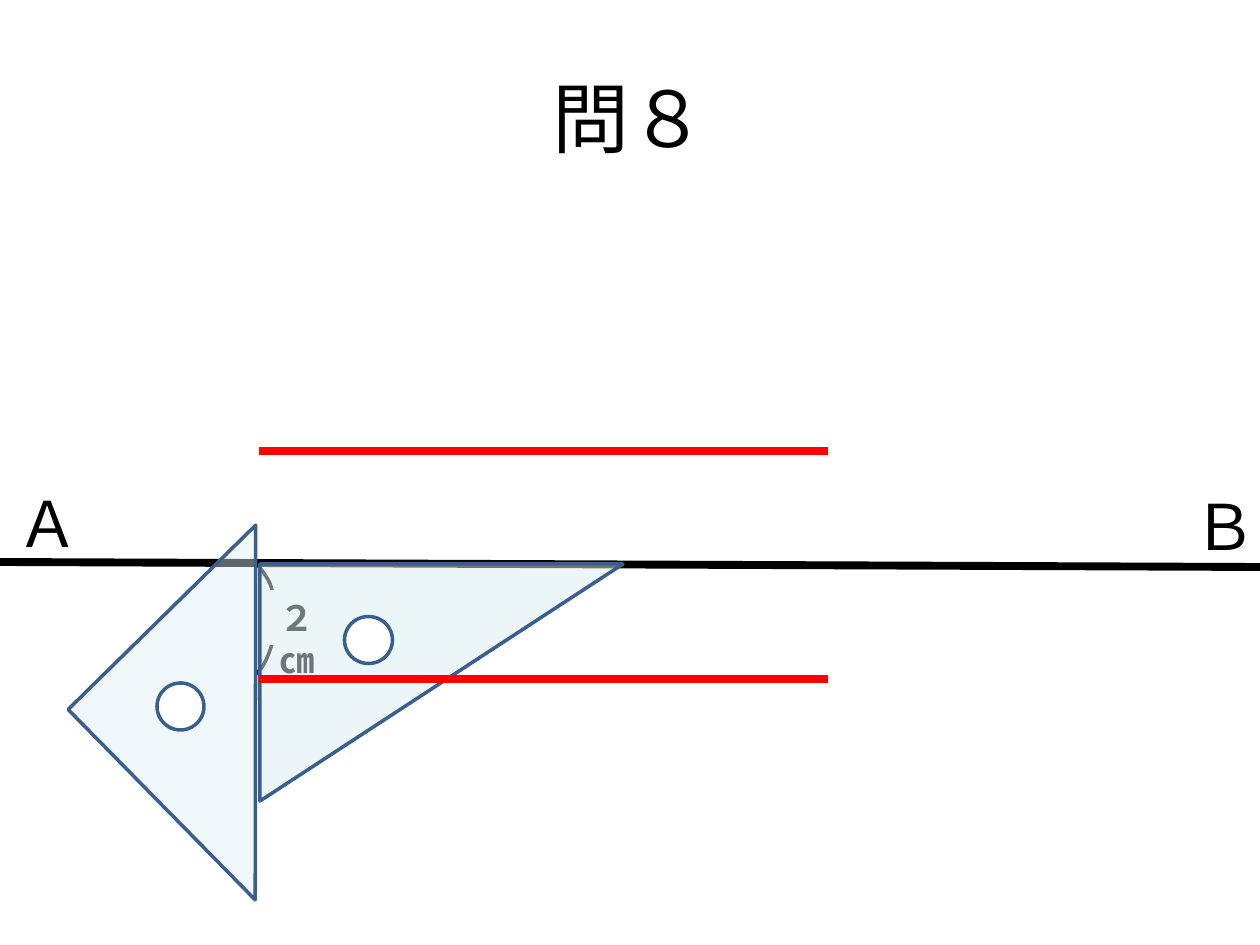
import dataclasses

import pptx
import pptx.dml.color
import pptx.enum.shapes
import pptx.enum.text
import pptx.oxml
import pptx.oxml.ns
import pptx.shapes.autoshape
import pptx.slide
import pptx.text.text
import pptx.util

EMU_PER_PX = 914400 / 126
COLOURS = {"ink": "000000", "paper": "FFFFFF", "glass": "DBEEF4", "edge": "3A5F8C", "answer": "FF0000"}
FONT = "Calibri"
CURVE_STEPS = 8
Point = tuple[int, int]


@dataclasses.dataclass
class Area:
    left: int
    top: int
    width: int
    height: int


@dataclasses.dataclass
class Label:
    text: str
    area: Area
    size: int
    bold: bool = False
    fill: str | None = None


@dataclasses.dataclass
class Rule:
    start: Point
    end: Point
    colour: str


@dataclasses.dataclass
class SetSquare:
    body: Area
    hole: Area
    rotation: float
    opacity: int


BRACE_START = (257, 564)
BRACE_CURVES = [
    ((263, 572), (270, 580), (272, 590)),
    ((276, 598), (277, 610), (276, 621)),
    ((276, 633), (271, 649), (267, 658)),
    ((263, 667), (260, 670), (256, 674)),
]
DISTANCE = Label("２㎝", Area(267, 590, 86, 55), 20, True, "paper")
TITLE = Label("問８", Area(63, 38, 1134, 157), 44)
END_LABELS = [
    Label("Ａ", Area(4, 478, 71, 89), 36),
    Label("Ｂ", Area(1181, 481, 74, 89), 36),
]
BASE_LINE = Rule((1260, 567), (0, 562), "ink")
PARALLELS = [Rule((828, y), (259, y), "answer") for y in (451, 679)]
SET_SQUARES = [
    SetSquare(Area(122, 581, 267, 263), Area(157, 683, 47, 47), 45.5, 43),
    SetSquare(Area(323, 501, 237, 363), Area(345, 616, 47, 48), 90, 50),
]


def px(value: float) -> pptx.util.Emu:
    return pptx.util.Emu(round(value * EMU_PER_PX))


def rgb(name: str) -> pptx.dml.color.RGBColor:
    return pptx.dml.color.RGBColor.from_string(COLOURS[name])


def bounds(area: Area) -> list[pptx.util.Emu]:
    return [px(value) for value in dataclasses.astuple(area)]


def write(frame: pptx.text.text.TextFrame, label: Label) -> None:
    frame.word_wrap = True
    para = frame.paragraphs[0]
    span = para.add_run()
    span.text = label.text
    span.font.name = FONT
    span.font.size = pptx.util.Pt(label.size)
    span.font.bold = label.bold
    span.font.color.rgb = rgb("ink")


def draw_label(page: pptx.slide.Slide, label: Label) -> None:
    box = page.shapes.add_textbox(*bounds(label.area))
    box.text_frame.vertical_anchor = pptx.enum.text.MSO_ANCHOR.TOP
    if label.fill:
        box.fill.solid()
        box.fill.fore_color.rgb = rgb(label.fill)
    write(box.text_frame, label)


def draw_title(page: pptx.slide.Slide, label: Label) -> None:
    title = page.shapes.title
    title.left, title.top, title.width, title.height = bounds(label.area)
    title.text_frame.vertical_anchor = pptx.enum.text.MSO_ANCHOR.MIDDLE
    write(title.text_frame, label)
    title.text_frame.paragraphs[0].alignment = pptx.enum.text.PP_ALIGN.CENTER


def draw_rule(page: pptx.slide.Slide, rule: Rule) -> None:
    ends = [px(value) for value in rule.start + rule.end]
    line = page.shapes.add_connector(pptx.enum.shapes.MSO_CONNECTOR.STRAIGHT, *ends)
    line.line.color.rgb = rgb(rule.colour)
    line.line.width = pptx.util.Pt(4.5)
    pptx.oxml.ns.qn("a:effectLst")
    line._element.spPr.append(pptx.oxml.parse_xml(f"<a:effectLst {pptx.oxml.ns.nsdecls('a')}/>"))


def outline(shape: pptx.shapes.autoshape.Shape, colour: str) -> None:
    shape.shadow.inherit = False
    shape.line.color.rgb = rgb(colour)
    shape.line.width = pptx.util.Pt(2)


def draw_set_square(page: pptx.slide.Slide, square: SetSquare) -> None:
    group = page.shapes.add_group_shape()
    kinds = pptx.enum.shapes.MSO_SHAPE
    parts = [
        (kinds.RIGHT_TRIANGLE, square.body, "glass", square.opacity),
        (kinds.OVAL, square.hole, "paper", 100),
    ]
    for kind, area, fill, opacity in parts:
        shape = group.shapes.add_shape(kind, *bounds(area))
        shape.rotation = square.rotation
        shape.fill.solid()
        shape.fill.fore_color.rgb = rgb(fill)
        outline(shape, "edge")
        if opacity < 100:
            colour = shape._element.spPr.find(".//" + pptx.oxml.ns.qn("a:srgbClr"))
            alpha = f'<a:alpha {pptx.oxml.ns.nsdecls("a")} val="{opacity * 1000}"/>'
            colour.append(pptx.oxml.parse_xml(alpha))


def curve_point(knots: tuple[Point, ...], t: float) -> tuple[pptx.util.Emu, pptx.util.Emu]:
    weights = ((1 - t) ** 3, 3 * t * (1 - t) ** 2, 3 * t**2 * (1 - t), t**3)
    x, y = (px(sum(w * k[axis] for w, k in zip(weights, knots))) for axis in (0, 1))
    return x, y


def draw_brace(page: pptx.slide.Slide) -> None:
    points = []
    start = BRACE_START
    for curve in BRACE_CURVES:
        knots = (start, *curve)
        points += [curve_point(knots, step / CURVE_STEPS) for step in range(1, CURVE_STEPS + 1)]
        start = curve[-1]
    builder = page.shapes.build_freeform(*(px(value) for value in BRACE_START))
    builder.add_line_segments(points, close=False)
    brace = builder.convert_to_shape()
    brace.fill.background()
    outline(brace, "ink")


def main() -> None:
    deck = pptx.Presentation()
    deck.slide_width, deck.slide_height = px(1260), px(945)
    page = deck.slides.add_slide(deck.slide_layouts[5])
    draw_title(page, TITLE)
    draw_brace(page)
    draw_label(page, DISTANCE)
    draw_rule(page, BASE_LINE)
    for label in END_LABELS:
        draw_label(page, label)
    for square in SET_SQUARES:
        draw_set_square(page, square)
    for rule in PARALLELS:
        draw_rule(page, rule)
    deck.save("out.pptx")


if __name__ == "__main__":
    main()
